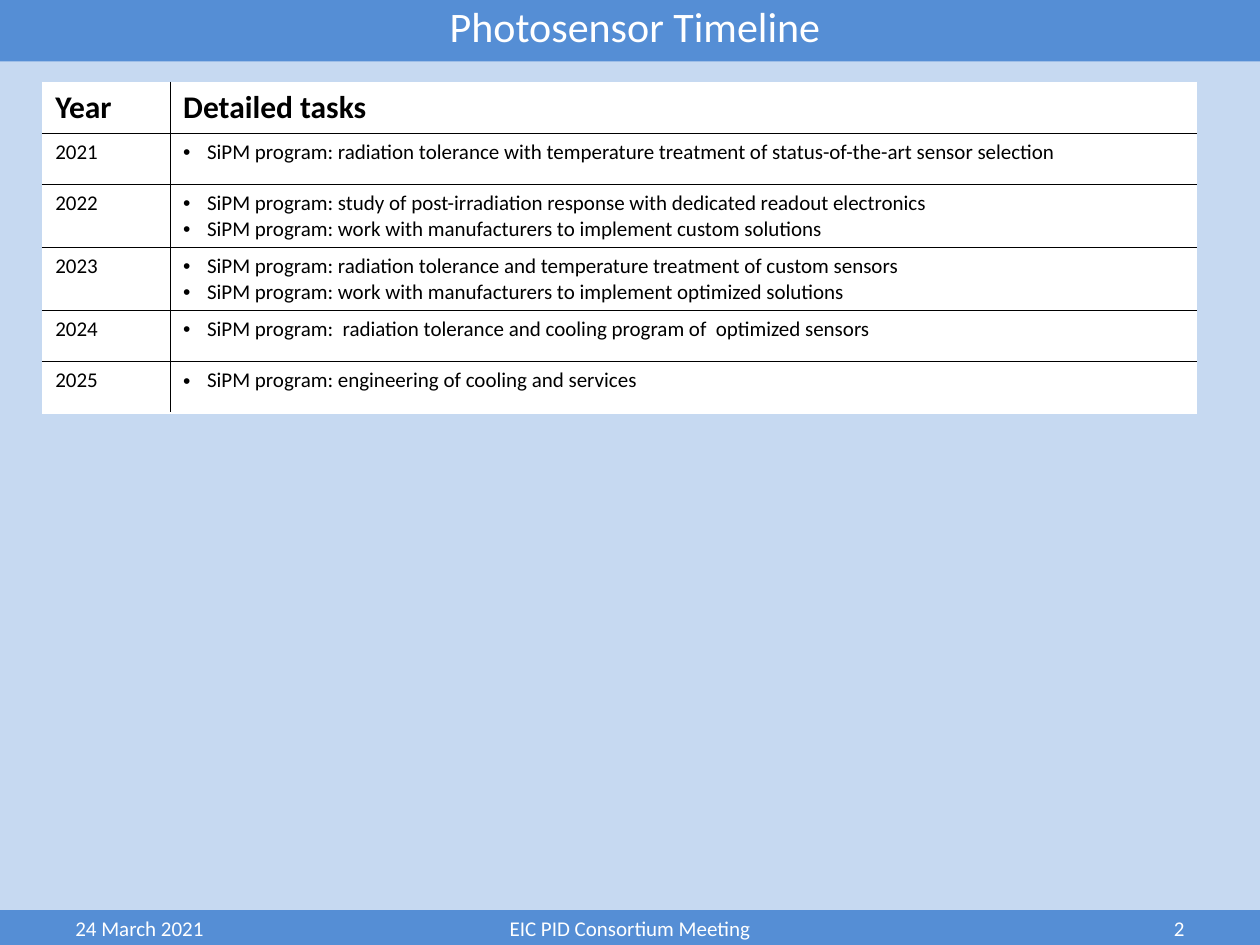
import pptx
import pptx.util
from lxml import etree
from pptx.dml.color import RGBColor
from pptx.enum.shapes import MSO_SHAPE
from pptx.enum.text import MSO_ANCHOR, PP_ALIGN
from pptx.oxml.ns import qn

Cm, Pt = pptx.util.Cm, pptx.util.Pt
COLOURS = {"background": "C6D9F1", "band": "558ED5", "white": "FFFFFF", "black": "000000"}
INDENT = Cm(0.48)

ROWS = [
    ("Year", ["Detailed tasks"]),
    ("2021", ["SiPM program: radiation tolerance with temperature treatment of status-of-the-art sensor selection"]),
    ("2022", ["SiPM program: study of post-irradiation response with dedicated readout electronics",
              "SiPM program: work with manufacturers to implement custom solutions"]),
    ("2023", ["SiPM program: radiation tolerance and temperature treatment of custom sensors",
              "SiPM program: work with manufacturers to implement optimized solutions"]),
    ("2024", ["SiPM program:  radiation tolerance and cooling program of  optimized sensors"]),
    ("2025", ["SiPM program: engineering of cooling and services"]),
]


def write(para, text, size, colour, bold=False):
    span = para.add_run()
    span.text = text
    for name, value in {"name": "Calibri", "size": Pt(size), "bold": bold}.items():
        setattr(span.font, name, value)
    span.font.color.rgb = RGBColor.from_string(COLOURS[colour])


def draw_borders(cell, colours):
    """Give the cell 1 pt borders; they must precede its fill in the XML."""
    properties = cell._tc.get_or_add_tcPr()
    for position, (side, colour) in enumerate(colours.items()):
        line = etree.Element(qn("a:" + side), w=str(Pt(1)))
        fill = etree.SubElement(line, qn("a:solidFill"))
        etree.SubElement(fill, qn("a:srgbClr"), val=COLOURS[colour])
        properties.insert(position, line)


deck = pptx.Presentation()
deck.slide_width, deck.slide_height = Cm(25.4), Cm(19.05)
slide = deck.slides.add_slide(deck.slide_layouts[5])
slide.background.fill.solid()
slide.background.fill.fore_color.rgb = RGBColor.from_string(COLOURS["background"])

# Title and the bands behind the text
title = slide.shapes.title
for top, height in [(0, 1.24), (18.35, 0.7)]:
    band = slide.shapes.add_shape(MSO_SHAPE.RECTANGLE, 0, Cm(top), deck.slide_width, Cm(height))
    band.shadow.inherit = False
    band.fill.solid()
    band.fill.fore_color.rgb = RGBColor.from_string(COLOURS["band"])
    band.line.fill.background()
    title.element.addprevious(band.element)

for name, value in {"left": Cm(8.6), "top": Cm(-0.12), "width": Cm(8.4), "height": Cm(1.28)}.items():
    setattr(title, name, value)
title.text_frame.vertical_anchor = MSO_ANCHOR.TOP
title.text_frame.word_wrap = False
title.text_frame.paragraphs[0].alignment = PP_ALIGN.CENTER
write(title.text_frame.paragraphs[0], "Photosensor Timeline", 24, "white")

# Footer
for text, left, width, alignment in [
    ("24 March 2021", 1.27, 5.93, PP_ALIGN.LEFT),
    ("EIC PID Consortium Meeting", 8.68, 8.04, PP_ALIGN.CENTER),
    ("2", 18.2, 5.93, PP_ALIGN.RIGHT),
]:
    box = slide.shapes.add_textbox(Cm(left), Cm(18.36), Cm(width), Cm(0.7))
    box.text_frame.word_wrap = True
    box.text_frame.vertical_anchor = MSO_ANCHOR.MIDDLE
    para = box.text_frame.paragraphs[0]
    para.alignment = alignment
    write(para, text, 12, "white")

# Timeline table: white outside, black between cells
widths = [2.58, 20.68]
row_height = 1.03
table = slide.shapes.add_table(len(ROWS), len(widths), Cm(0.86), Cm(1.66),
                               Cm(sum(widths)), Cm(row_height * len(ROWS))).table
table.horz_banding = False
for column, width in zip(table.columns, widths):
    column.width = Cm(width)

for row_index, (year, tasks) in enumerate(ROWS):
    is_header = row_index == 0
    is_last = row_index == len(ROWS) - 1
    table.rows[row_index].height = Cm(row_height)
    for column_index, lines in enumerate([[year], tasks]):
        cell = table.cell(row_index, column_index)
        cell.fill.solid()
        cell.fill.fore_color.rgb = RGBColor.from_string(COLOURS["white"])
        draw_borders(cell, {
            "lnL": "black" if column_index else "white",
            "lnR": "white" if column_index else "black",
            "lnT": "white" if is_header else "black",
            "lnB": "white" if is_last else "black",
        })
        for line_index, text in enumerate(lines):
            para = cell.text_frame.add_paragraph() if line_index else cell.text_frame.paragraphs[0]
            write(para, text, 18 if is_header else 12, "black", is_header)
            if column_index and not is_header:
                properties = para._p.get_or_add_pPr()
                properties.set("marL", str(INDENT))
                properties.set("indent", str(-INDENT))
                etree.SubElement(properties, qn("a:buFont"), typeface="Arial")
                etree.SubElement(properties, qn("a:buChar"), char="•")

deck.save("out.pptx")
